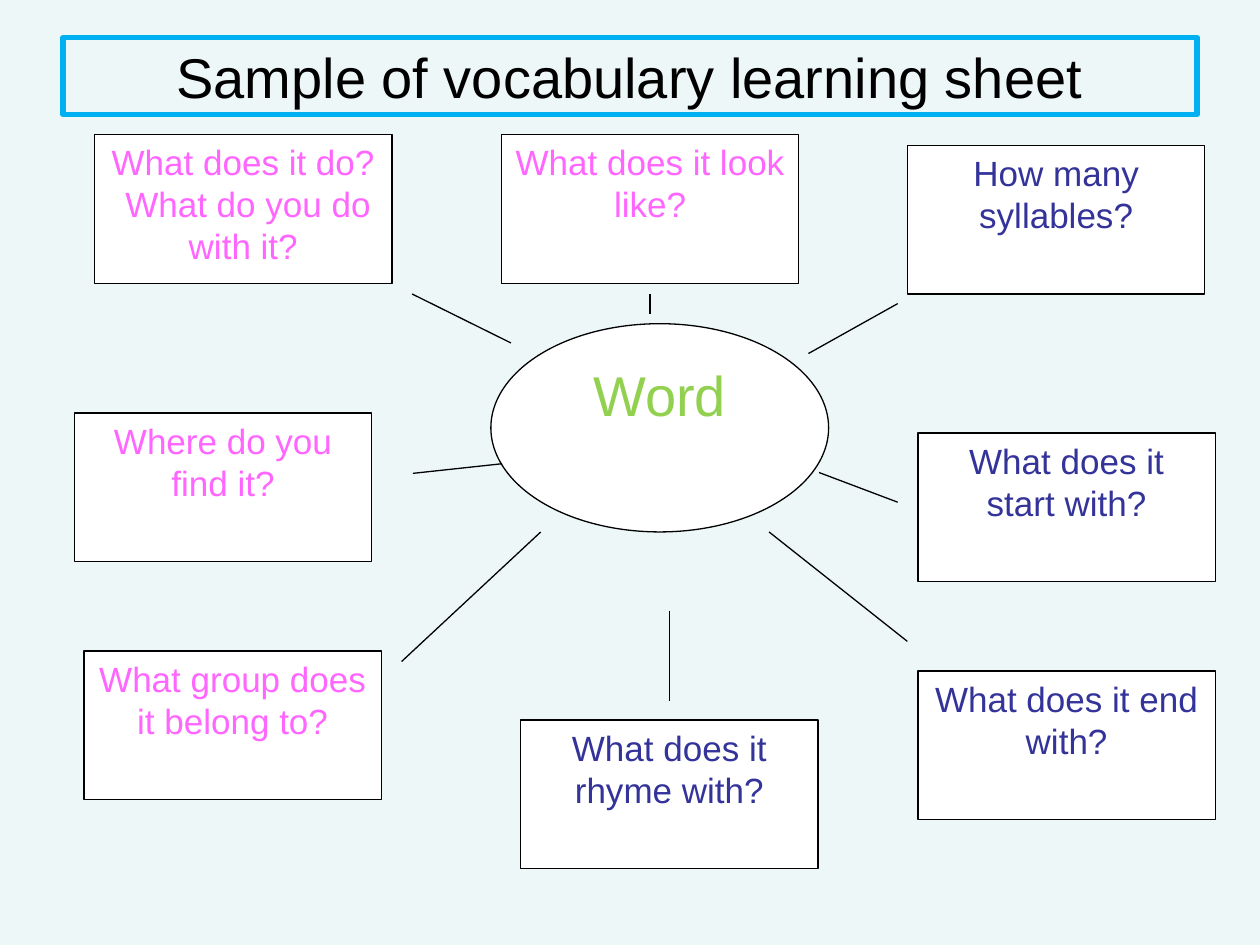
import pptx
import pptx.util
import pptx.dml.color
import pptx.enum.shapes
import pptx.enum.text
import pptx.oxml

Pt = pptx.util.Pt
SHAPE = pptx.enum.shapes.MSO_SHAPE
ANCHOR = pptx.enum.text.MSO_ANCHOR

PINK, NAVY, GREEN = "FF66FF", "333399", "92D050"
BLACK, WHITE, CYAN, PALE = "000000", "FFFFFF", "00B0F0", "EDF7F7"
BOX = (170, 85)

# Left, top, text and colour of each question
ASKS = [
    (286.5, 77, "What does it look like?", PINK),
    (518.5, 83, "How many syllables?", NAVY),
    (54, 77, "What does it do?  What do you do with it?", PINK),
    (42.5, 236, "Where do you find it?", PINK),
    (48, 372, "What group does it belong to?", PINK),
    (524.5, 247.5, "What does it start with?", NAVY),
    (524.5, 383.5, "What does it end with?", NAVY),
    (297.5, 411.5, "What does it rhyme with?", NAVY),
]

# Start and end of each spoke
SPOKES = [
    (235.5, 168, 292, 196),
    (468, 270, 513, 287),
    (371.5, 168, 371.5, 179.5),
    (309, 304, 229.5, 378),
    (382.5, 349, 382.5, 400.5),
    (513, 173.5, 462, 202),
    (439.5, 304, 518.5, 366.5),
    (236, 270.5, 287, 265),
]


def color(code):
    return pptx.dml.color.RGBColor.from_string(code)


def add_box(slide, kind, place, text, size, ink, fill=WHITE, edge=BLACK,
            width=0.75, anchor=ANCHOR.TOP):
    shape = slide.shapes.add_shape(kind, *map(Pt, place))
    shape.shadow.inherit = False
    if fill:
        shape.fill.solid()
        shape.fill.fore_color.rgb = color(fill)
    else:
        shape.fill.background()
    shape.line.color.rgb = color(edge)
    shape.line.width = Pt(width)

    frame = shape.text_frame
    frame.word_wrap = True
    frame.vertical_anchor = anchor
    frame.text = text
    para = frame.paragraphs[0]
    para.alignment = pptx.enum.text.PP_ALIGN.CENTER
    font = para.runs[0].font
    font.name = "Arial"
    font.size = Pt(size)
    font.color.rgb = color(ink)


def add_spoke(slide, ends):
    line = slide.shapes.add_connector(
        pptx.enum.shapes.MSO_CONNECTOR.STRAIGHT, *map(Pt, ends))
    line.line.color.rgb = color(BLACK)
    line.line.width = Pt(0.75)
    # An empty effect list removes the theme shadow
    line._element.spPr.append(pptx.oxml.parse_xml(
        '<a:effectLst xmlns:a='
        '"http://schemas.openxmlformats.org/drawingml/2006/main"/>'))


def main():
    deck = pptx.Presentation()
    deck.slide_width, deck.slide_height = Pt(720), Pt(540)
    slide = deck.slides.add_slide(deck.slide_layouts[6])
    slide.background.fill.solid()
    slide.background.fill.fore_color.rgb = color(PALE)

    # Word in the middle, questions around it
    add_box(slide, SHAPE.OVAL, (280.5, 185, 193, 119), "Word", 32, GREEN)
    for left, top, text, ink in ASKS:
        add_box(slide, SHAPE.RECTANGLE, (left, top, *BOX), text, 20, ink)
    for ends in SPOKES:
        add_spoke(slide, ends)

    # Title
    add_box(slide, SHAPE.RECTANGLE, (36, 21.5, 648, 44),
            "Sample of vocabulary learning sheet", 32, BLACK,
            fill=None, edge=CYAN, width=3, anchor=ANCHOR.MIDDLE)
    deck.save("out.pptx")


if __name__ == "__main__":
    main()
